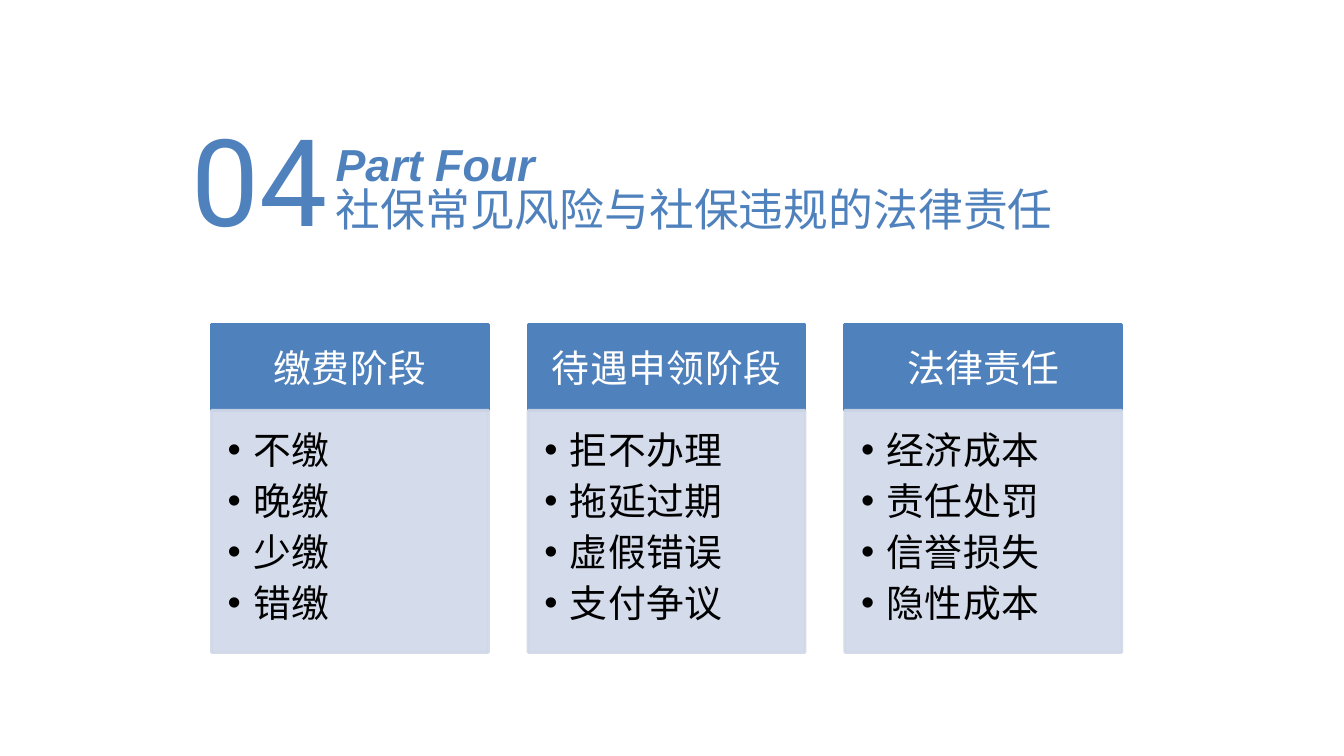
from dataclasses import dataclass

from lxml import etree
from pptx import Presentation
from pptx import util as u
from pptx.dml.color import RGBColor
from pptx.enum import shapes, text
from pptx.oxml import ns

BLUE = RGBColor(0x4F, 0x81, 0xBD)
PALE_BLUE = RGBColor(0xD0, 0xD8, 0xE8)
WHITE = RGBColor(0xFF, 0xFF, 0xFF)
BLACK = RGBColor(0x00, 0x00, 0x00)

# Card grid, in centimetres
CARD_LEFT, CARD_PITCH, CARD_WIDTH = 5.33, 7.98, 6.98
HEADER_TOP, HEADER_HEIGHT, BODY_HEIGHT = 8.18, 2.16, 6.1


@dataclass
class Heading:
    text: str
    left: float
    top: float
    width: float
    height: float
    size: float
    font: str
    line_spacing: float
    emphasis: bool = False


@dataclass
class Card:
    title: str
    items: list[str]
    title_font: str = "Arial"
    title_tracking: int = 40


HEADINGS = [
    Heading("04", 4.83, 2.31, 4.22, 4.06, 86.5, "Roboto", 113.9),
    Heading("Part Four", 8.46, 3.53, 11, 1.27, 32, "Arial", 35.8, emphasis=True),
    Heading("社保常见风险与社保违规的法律责任", 8.46, 4.8, 18.52, 1.14, 32,
            "Noto Sans CJK SC", 32),
]

CARDS = [
    Card("缴费阶段", ["不缴", "晚缴", "少缴", "错缴"]),
    Card("待遇申领阶段", ["拒不办理", "拖延过期", "虚假错误", "支付争议"]),
    Card("法律责任", ["经济成本", "责任处罚", "信誉损失", "隐性成本"], "Calibri", 0),
]


def set_margins(frame, left: float, top: float, right: float, bottom: float) -> None:
    frame.margin_left, frame.margin_top = u.Cm(left), u.Cm(top)
    frame.margin_right, frame.margin_bottom = u.Cm(right), u.Cm(bottom)


def add_run(paragraph, content: str, *, size: float, font: str, color: RGBColor,
            emphasis: bool = False, tracking: int = 0) -> None:
    run = paragraph.add_run()
    run.text = content
    run.font.size = u.Pt(size)
    run.font.name = font
    run.font.color.rgb = color
    run.font.bold = run.font.italic = emphasis
    properties = run.font._element
    etree.SubElement(properties, ns.qn("a:ea"), typeface=font)
    if tracking:
        properties.set("spc", str(tracking))


def add_bullet(paragraph) -> None:
    properties = paragraph._p.get_or_add_pPr()
    indent = u.Cm(0.64)
    properties.set("marL", str(indent))
    properties.set("indent", str(-indent))
    etree.SubElement(properties, ns.qn("a:buFont"), typeface="Arial")
    etree.SubElement(properties, ns.qn("a:buChar"), char="•")


def add_heading(slide, heading: Heading) -> None:
    box = slide.shapes.add_textbox(u.Cm(heading.left), u.Cm(heading.top),
                                   u.Cm(heading.width), u.Cm(heading.height))
    frame = box.text_frame
    frame.word_wrap = True
    set_margins(frame, 0, 0, 0, 0)
    paragraph = frame.paragraphs[0]
    paragraph.line_spacing = u.Pt(heading.line_spacing)
    add_run(paragraph, heading.text, size=heading.size, font=heading.font,
            color=BLUE, emphasis=heading.emphasis)


def add_panel(slide, left: float, top: float, height: float, color: RGBColor,
              opacity: int = 100):
    shape = slide.shapes.add_shape(shapes.MSO_SHAPE.RECTANGLE, u.Cm(left), u.Cm(top),
                                   u.Cm(CARD_WIDTH), u.Cm(height))
    shape.shadow.inherit = False
    shape.fill.solid()
    shape.fill.fore_color.rgb = color
    shape.line.color.rgb = color
    shape.line.width = u.Pt(2)
    if opacity < 100:
        for color_element in shape._element.spPr.iter(ns.qn("a:srgbClr")):
            etree.SubElement(color_element, ns.qn("a:alpha"), val=str(opacity * 1000))
    shape.text_frame.word_wrap = True
    return shape


def add_card(slide, card: Card, left: float) -> None:
    # Header
    header = add_panel(slide, left, HEADER_TOP, HEADER_HEIGHT, BLUE)
    frame = header.text_frame
    frame.vertical_anchor = text.MSO_ANCHOR.MIDDLE
    set_margins(frame, 0.53, 0.3, 0.53, 0.3)
    paragraph = frame.paragraphs[0]
    paragraph.alignment = text.PP_ALIGN.CENTER
    add_run(paragraph, card.title, size=27, font=card.title_font, color=WHITE,
            tracking=card.title_tracking)

    # Bulleted body
    body = add_panel(slide, left, HEADER_TOP + HEADER_HEIGHT, BODY_HEIGHT, PALE_BLUE, 90)
    frame = body.text_frame
    frame.vertical_anchor = text.MSO_ANCHOR.TOP
    set_margins(frame, 0.41, 0.41, 0.53, 0.61)
    for index, item in enumerate(card.items):
        paragraph = frame.add_paragraph() if index else frame.paragraphs[0]
        add_bullet(paragraph)
        paragraph.alignment = text.PP_ALIGN.LEFT
        paragraph.line_spacing = u.Pt(32.4)
        paragraph.space_after = u.Pt(4)
        add_run(paragraph, item, size=27, font="Arial", color=BLACK, tracking=40)


def main() -> None:
    presentation = Presentation()
    presentation.slide_width, presentation.slide_height = u.Cm(33.87), u.Cm(19.05)
    slide = presentation.slides.add_slide(presentation.slide_layouts[6])
    for heading in HEADINGS:
        add_heading(slide, heading)
    for index, card in enumerate(CARDS):
        add_card(slide, card, CARD_LEFT + index * CARD_PITCH)
    presentation.save("out.pptx")


if __name__ == "__main__":
    main()
